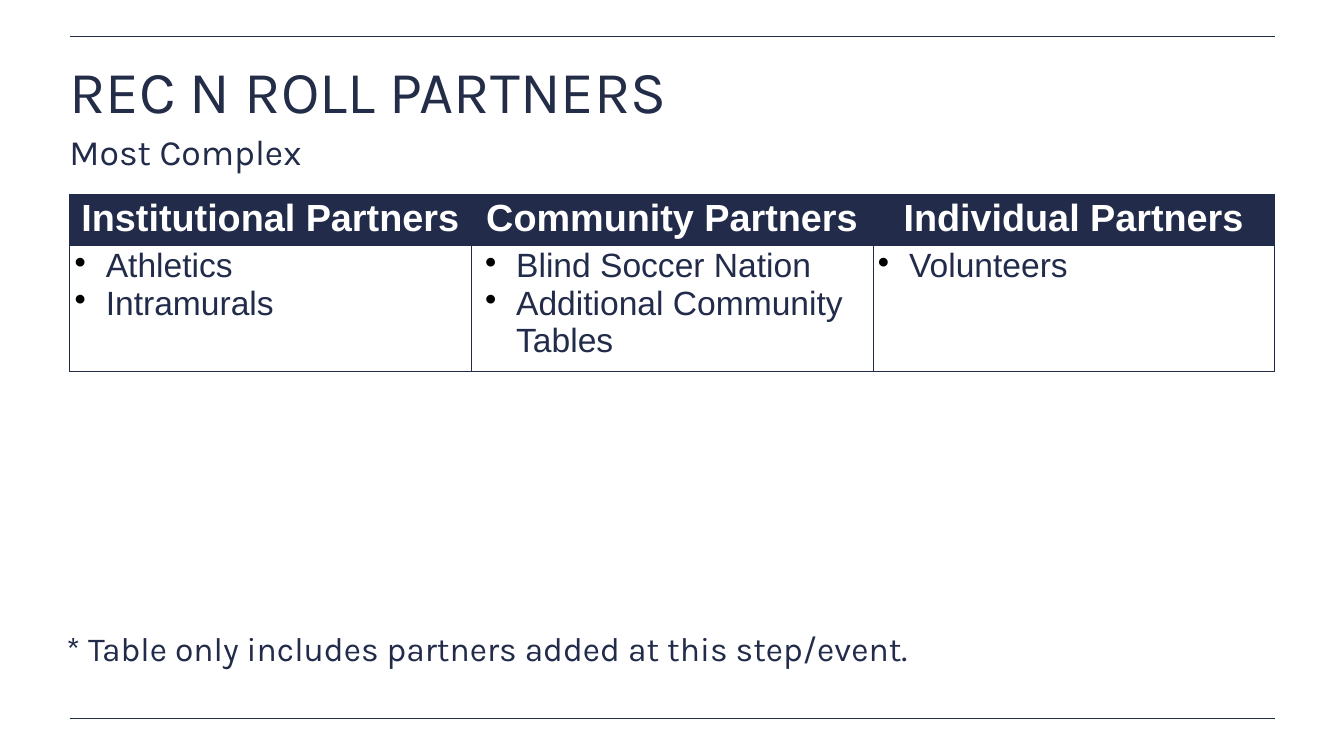
from pptx import Presentation
from pptx.dml.color import RGBColor
from pptx.enum.shapes import MSO_CONNECTOR as Connector
from pptx.enum.text import MSO_ANCHOR as Anchor, PP_ALIGN as Align
from pptx.oxml.xmlchemy import OxmlElement as Element
from pptx.util import Cm, Pt

THEME = {
    "ink": "222C4A", "title_ink": "232D48", "paper": "FFFFFF", "bullet": "000000",
    "heading_font": "Karla", "table_font": "Arial",
    "title": 85, "subtitle": 50.9, "note": 48, "header": 54, "item": 48,
    "rule": 2, "border": 1,
}
TEXTS = [
    ("REC N ROLL PARTNERS", "title", "title_ink", (3.35, 3.28, 60.73, 4.19)),
    ("Most Complex", "subtitle", "ink", (3.35, 6.81, 61.04, 2.21)),
    ("* Table only includes partners added at this step/event.", "note", "ink",
     (3.2, 31.88, 61.04, 2.21)),
]
PARTNERS = [
    ("Institutional Partners", ["Athletics", "Intramurals"], 1.57),
    ("Community Partners", ["Blind Soccer Nation", "Additional Community Tables"], 2.01),
    ("Individual Partners", ["Volunteers"], 1.57),
]
LEFT, WIDTH = 3.51, 60.73
RULES = (1.83, 36.2)
TABLE_TOP, ROW_HEIGHTS = 9.8, (2.42, 5.9)
HANGING = 1.57


def color(name):
    return RGBColor.from_string(THEME[name])


def apply(target, values):
    for name, value in values.items():
        setattr(target, name, value)


def write(paragraph, text, font, size, ink, bold=False):
    run = paragraph.add_run()
    run.text = text
    apply(run.font, {"name": THEME[font], "size": Pt(THEME[size]), "bold": bold})
    run.font.color.rgb = color(ink)


def add_rule(slide, top):
    rule = slide.shapes.add_connector(
        Connector.STRAIGHT, Cm(LEFT), Cm(top), Cm(LEFT + WIDTH), Cm(top))
    rule.line.color.rgb = color("title_ink")
    rule.line.width = Pt(THEME["rule"])
    rule._element.spPr.append(Element("a:effectLst"))


def add_text(slide, text, size, ink, box):
    frame = slide.shapes.add_textbox(*map(Cm, box)).text_frame
    margins = {f"margin_{side}": Cm(0.15) for side in ("left", "top", "right", "bottom")}
    apply(frame, {"word_wrap": True, "vertical_anchor": Anchor.TOP, **margins})
    paragraph = frame.paragraphs[0]
    paragraph.line_spacing = 0.8
    write(paragraph, text, "heading_font", size, ink)


def solid_fill(parent, name):
    swatch = Element("a:srgbClr")
    swatch.set("val", THEME[name])
    parent.append(swatch)


def add_bullet(paragraph, indent):
    properties = paragraph._p.get_or_add_pPr()
    properties.set("marL", str(Cm(indent)))
    properties.set("indent", str(-Cm(HANGING)))
    bullet_color = Element("a:buClr")
    solid_fill(bullet_color, "bullet")
    bullet = Element("a:buChar")
    bullet.set("char", "•")
    properties.extend([bullet_color, bullet])


def style_cell(cell, fill):
    properties = cell._tc.get_or_add_tcPr()
    for side in ("lnL", "lnR", "lnT", "lnB"):
        border = Element(f"a:{side}")
        border.set("w", str(Pt(THEME["border"])))
        paint = Element("a:solidFill")
        solid_fill(paint, "ink")
        border.append(paint)
        properties.append(border)
    cell.fill.solid()
    cell.fill.fore_color.rgb = color(fill)


def add_partner_table(slide):
    table = slide.shapes.add_table(
        2, len(PARTNERS), Cm(LEFT), Cm(TABLE_TOP), Cm(WIDTH), Cm(sum(ROW_HEIGHTS))).table
    for row, height in zip(table.rows, ROW_HEIGHTS):
        row.height = Cm(height)
    for column, (heading, items, indent) in enumerate(PARTNERS):
        table.columns[column].width = Cm(WIDTH / len(PARTNERS))
        header, body = table.cell(0, column), table.cell(1, column)
        style_cell(header, "ink")
        style_cell(body, "paper")
        paragraph = header.text_frame.paragraphs[0]
        paragraph.alignment = Align.CENTER
        write(paragraph, heading, "table_font", "header", "paper", True)
        frame = body.text_frame
        for number, item in enumerate(items):
            paragraph = frame.add_paragraph() if number else frame.paragraphs[0]
            add_bullet(paragraph, indent)
            write(paragraph, item, "table_font", "item", "ink")


def main():
    presentation = Presentation()
    apply(presentation, {"slide_width": Cm(67.74), "slide_height": Cm(38.1)})
    slide = presentation.slides.add_slide(presentation.slide_layouts[6])
    slide.background.fill.solid()
    slide.background.fill.fore_color.rgb = color("paper")
    for top in RULES:
        add_rule(slide, top)
    for text in TEXTS:
        add_text(slide, *text)
    add_partner_table(slide)
    presentation.save("out.pptx")


if __name__ == "__main__":
    main()
